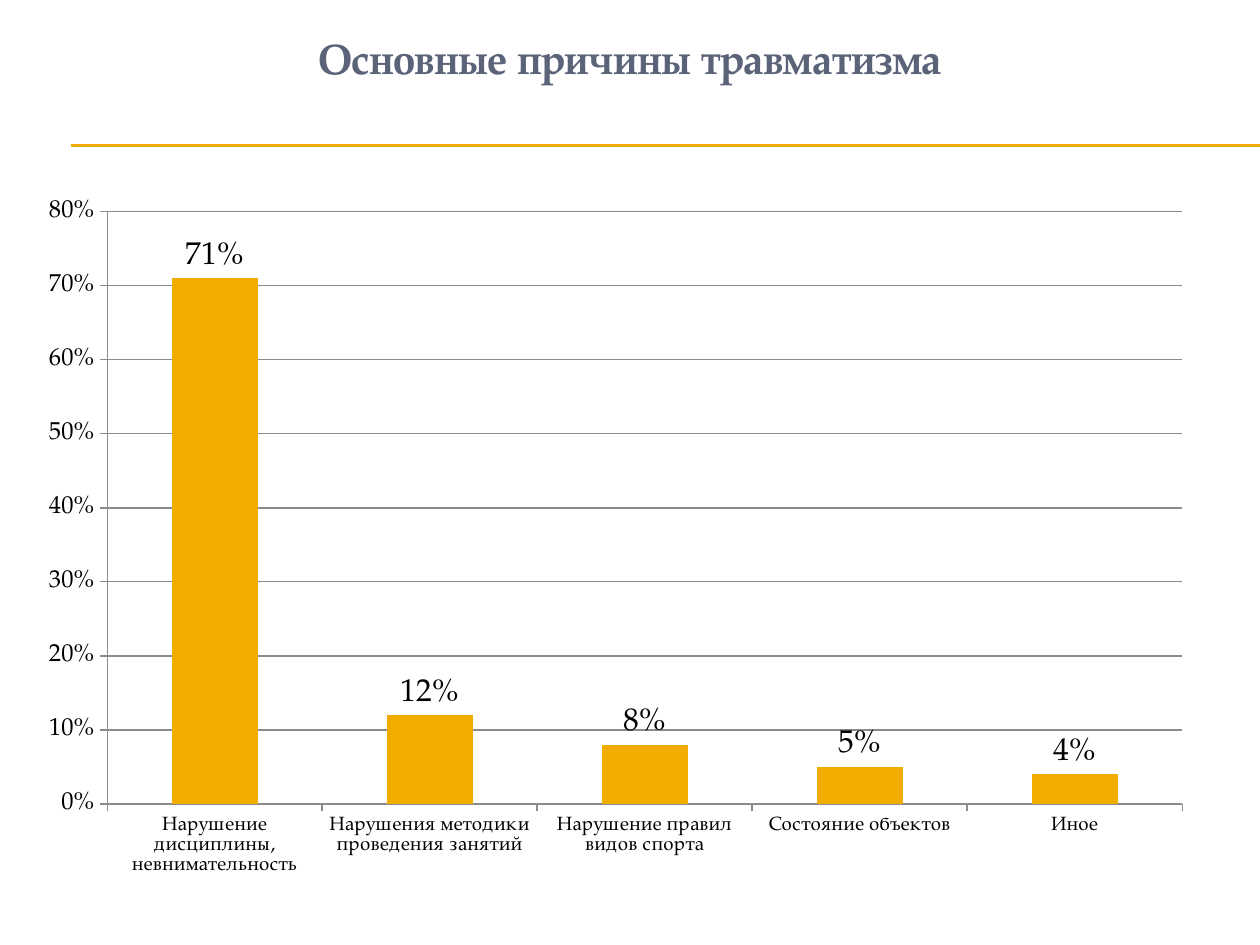
"""Build a slide with a column chart of the main causes of injuries."""
from lxml.etree import SubElement
from pptx import Presentation
from pptx.chart.data import CategoryChartData
from pptx.dml.color import RGBColor
from pptx.enum.chart import XL_CHART_TYPE as ChartType, XL_LABEL_POSITION as LabelPosition
from pptx.enum.chart import XL_TICK_MARK as TickMark
from pptx.enum.shapes import MSO_CONNECTOR as Connector
from pptx.enum.text import MSO_ANCHOR as Anchor, MSO_AUTO_SIZE as AutoSize, PP_ALIGN as Align
from pptx.oxml.ns import qn
from pptx.util import Inches, Pt

TITLE = "Основные причины травматизма"
CAUSES = [
    ("Нарушение дисциплины, невнимательность", 0.71),
    ("Нарушения методики проведения занятий", 0.12),
    ("Нарушение правил видов спорта", 0.08),
    ("Состояние объектов", 0.05),
    ("Иное", 0.04),
]
FONT = "TeX Gyre Pagella"
GOLD = RGBColor(0xF0, 0xAD, 0x00)
SLATE = RGBColor(0x5A, 0x63, 0x78)
BLACK = RGBColor(0, 0, 0)
GREY = RGBColor(0x8B, 0x8B, 0x8B)
WIDTH, HEIGHT = Inches(10), Inches(7.5)
RULE_LEFT, RULE_TOPS = Inches(0.56), (Inches(1.15), Inches(1.16))
TITLE_BOX = (0, Inches(0.21), WIDTH, Inches(0.5))
CHART_BOX = (Inches(0.2), Inches(1.47), Inches(9.37), Inches(5.59))


def add_rules(page):
    for top in RULE_TOPS:
        rule = page.shapes.add_connector(Connector.STRAIGHT, RULE_LEFT, top, WIDTH, top)
        rule.line.color.rgb = GOLD
        rule.line.width = Pt(0.75)
        SubElement(rule._element.spPr, qn("a:effectLst"))


def add_title(page):
    box = page.shapes.title
    box.left, box.top, box.width, box.height = TITLE_BOX
    frame = box.text_frame
    frame.word_wrap = True
    frame.auto_size = AutoSize.SHAPE_TO_FIT_TEXT
    frame.vertical_anchor = Anchor.TOP
    para = frame.paragraphs[0]
    para.alignment = Align.CENTER
    span = para.add_run()
    span.text = TITLE
    span.font.name, span.font.size, span.font.bold = FONT, Pt(24), True
    span.font.color.rgb = SLATE


def style_axis(axis, size):
    axis.major_tick_mark = TickMark.OUTSIDE
    axis.minor_tick_mark = TickMark.NONE
    axis.tick_labels.font.size = Pt(size)
    axis.format.line.color.rgb = GREY
    axis.format.line.width = Pt(0.75)


def add_causes_chart(page):
    data = CategoryChartData(number_format="0%")
    data.categories = [cause for cause, share in CAUSES]
    data.add_series("Series 1", [share for cause, share in CAUSES])
    chart = page.shapes.add_chart(ChartType.COLUMN_CLUSTERED, *CHART_BOX, data).chart
    chart.has_legend = chart.has_title = False
    chart.font.name, chart.font.size = FONT, Pt(18)
    chart.font.color.rgb = BLACK

    style_axis(chart.category_axis, 11)
    values = chart.value_axis
    style_axis(values, 14)
    values.minimum_scale, values.maximum_scale, values.major_unit = 0, 0.8, 0.1
    values.tick_labels.number_format = "0%"
    values.tick_labels.number_format_is_linked = False
    values.has_major_gridlines = True
    values.major_gridlines.format.line.color.rgb = GREY
    values.major_gridlines.format.line.width = Pt(0.75)

    plot = chart.plots[0]
    plot.gap_width = 150
    plot.vary_by_categories = False
    bars = plot.series[0]
    bars.format.fill.solid()
    bars.format.fill.fore_color.rgb = GOLD
    labels = bars.data_labels
    labels.show_value = True
    labels.number_format = "0%"
    labels.number_format_is_linked = False
    labels.position = LabelPosition.OUTSIDE_END
    labels.font.name, labels.font.size = FONT, Pt(18)
    labels.font.color.rgb = BLACK


def main():
    deck = Presentation()
    deck.slide_width, deck.slide_height = WIDTH, HEIGHT
    page = deck.slides.add_slide(deck.slide_layouts[5])
    add_rules(page)
    add_title(page)
    add_causes_chart(page)
    deck.save("out.pptx")


if __name__ == "__main__":
    main()
